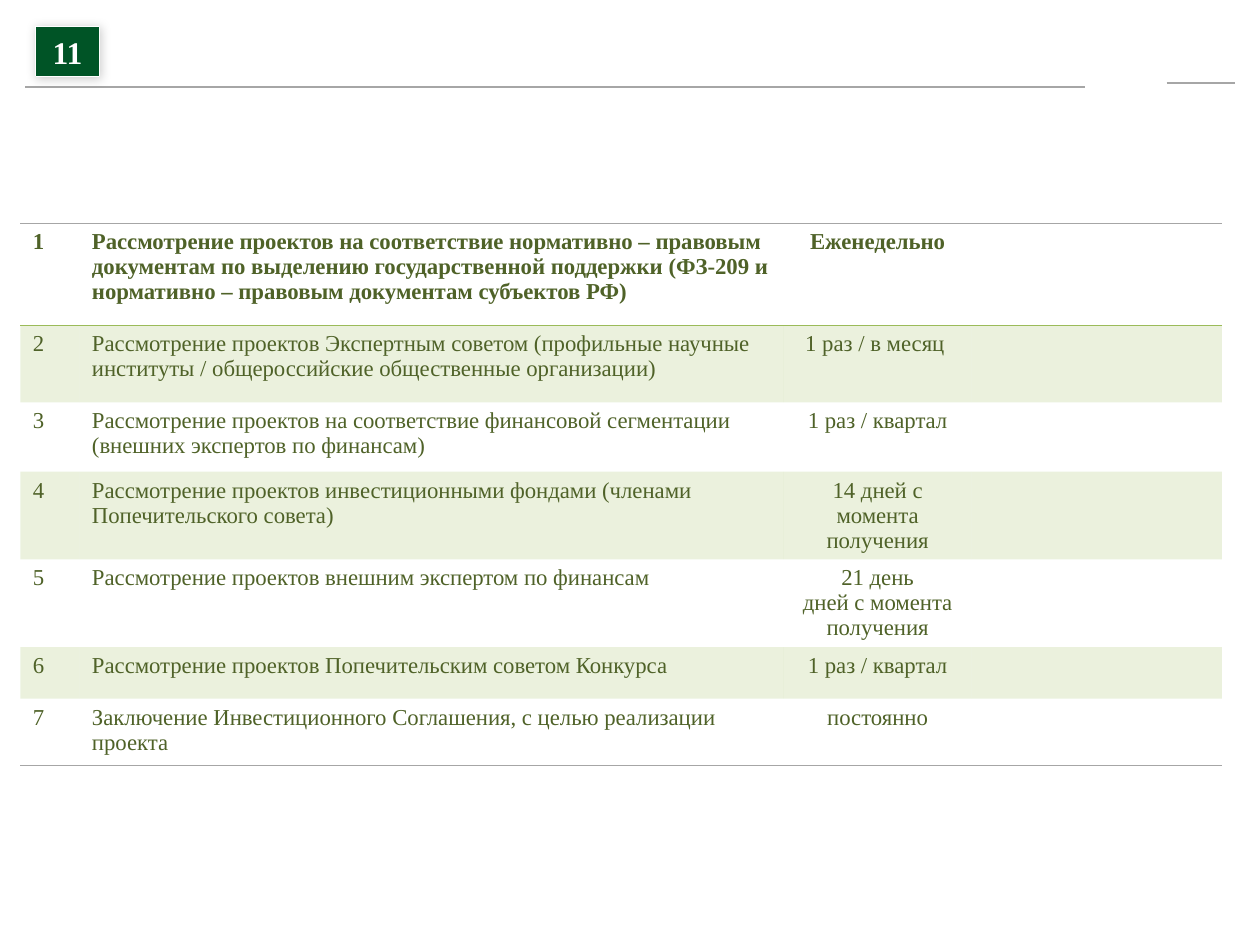
from dataclasses import dataclass

from lxml import etree
from pptx import Presentation
from pptx.dml.color import RGBColor
from pptx.enum import shapes, text
from pptx.oxml import ns, parse_xml
from pptx.util import Cm, Pt


@dataclass(frozen=True)
class Theme:
    font: str = "Times New Roman"
    ink: str = "4F6228"
    band: str = "9BBB59"
    rule: str = "A6A6A6"
    badge: str = "005426"
    white: str = "FFFFFF"
    body: int = 13
    number: int = 18


THEME = Theme()
PLAIN = "{2D5ABB26-0587-4C30-8999-92F81FD0307C}"
COLS = [1.19, 14.2, 3.78, 5.05]
ROWS = [2.06, 1.55, 1.4, 1.3, 1.17, 1.04, 1.35]
STAGES = [
    ("Рассмотрение проектов на соответствие нормативно – правовым документам "
     "по выделению государственной поддержки (ФЗ-209 и нормативно – правовым "
     "документам субъектов РФ)", "Еженедельно"),
    ("Рассмотрение проектов Экспертным советом (профильные научные институты / "
     "общероссийские общественные организации)", "1 раз / в месяц "),
    ("Рассмотрение проектов на соответствие финансовой сегментации "
     "(внешних экспертов по финансам)", "1 раз / квартал"),
    ("Рассмотрение проектов инвестиционными фондами "
     "(членами Попечительского совета)", "14 дней с момента получения"),
    ("Рассмотрение проектов внешним экспертом по финансам",
     "21 день\nдней с момента получения"),
    ("Рассмотрение проектов Попечительским советом Конкурса",
     "1 раз / квартал"),
    ("Заключение Инвестиционного Соглашения, с целью реализации проекта",
     "постоянно"),
]


def rgb(code):
    return RGBColor.from_string(code)


def write(frame, words, size=THEME.body, color=THEME.ink, bold=False,
          align=text.PP_ALIGN.LEFT):
    frame.text = words
    frame.word_wrap = True
    for para in frame.paragraphs:
        para.alignment = align
        for run in para.runs:
            font = run.font
            font.name, font.size, font.bold = THEME.font, Pt(size), bold
            font.color.rgb = rgb(color)


def add_rule(slide, left, right, top):
    line = slide.shapes.add_connector(
        shapes.MSO_CONNECTOR.STRAIGHT, Cm(left), Cm(top), Cm(right), Cm(top))
    line.line.color.rgb = rgb(THEME.rule)
    line.line.width = Pt(1)
    etree.SubElement(line._element.spPr, ns.qn("a:effectLst"))


def add_badge(slide, words):
    box = slide.shapes.add_shape(
        shapes.MSO_SHAPE.RECTANGLE, Cm(0.71), Cm(0.53), Cm(1.3), Cm(1.02))
    box.fill.solid()
    box.fill.fore_color.rgb = rgb(THEME.badge)
    box.line.color.rgb = rgb(THEME.white)
    box.line.width = Pt(0.75)
    box._element.spPr.append(parse_xml(
        f'<a:effectLst {ns.nsdecls("a")}><a:outerShdw blurRad="{Pt(6)}" '
        f'dist="{Pt(1)}" dir="2700000"><a:srgbClr val="000000">'
        '<a:alpha val="20000"/></a:srgbClr></a:outerShdw></a:effectLst>'))
    write(box.text_frame, words, size=THEME.number, color=THEME.white,
          bold=True, align=text.PP_ALIGN.CENTER)


def set_edge(cell, side, color, width):
    """Put a border first in the cell; add the bottom (B) before the top (T)."""
    cell._tc.get_or_add_tcPr().insert(0, parse_xml(
        f'<a:ln{side} {ns.nsdecls("a")} w="{Pt(width)}"><a:solidFill>'
        f'<a:srgbClr val="{color}"/></a:solidFill></a:ln{side}>'))


def set_band(cell, shaded):
    if not shaded:
        cell.fill.background()
        return
    cell.fill.solid()
    cell.fill.fore_color.rgb = rgb(THEME.band)
    color = cell._tc.tcPr.find(".//" + ns.qn("a:srgbClr"))
    etree.SubElement(color, ns.qn("a:alpha"), val="20000")


def add_stages(slide):
    table = slide.shapes.add_table(
        len(ROWS), len(COLS), Cm(0.41), Cm(4.5),
        Cm(sum(COLS)), Cm(sum(ROWS))).table
    table._tbl.tblPr.find(ns.qn("a:tableStyleId")).text = PLAIN
    for col, width in zip(table.columns, COLS):
        col.width = Cm(width)
    for row, high in zip(table.rows, ROWS):
        row.height = Cm(high)
    last = len(ROWS) - 1
    for num, (stage, term) in enumerate(STAGES):
        cells = list(table.rows[num].cells)
        for cell in cells:
            set_band(cell, num % 2 == 1)
            if num == 0:
                set_edge(cell, "B", THEME.band, 1)
                set_edge(cell, "T", THEME.rule, 0.75)
            elif num == last:
                set_edge(cell, "B", THEME.rule, 0.75)
        bold = num == 0
        write(cells[0].text_frame, str(num + 1), bold=bold)
        write(cells[1].text_frame, stage, bold=bold)
        write(cells[2].text_frame, term, bold=bold,
              align=text.PP_ALIGN.CENTER)


def main():
    deck = Presentation()
    deck.slide_width, deck.slide_height = Cm(25.4), Cm(19.05)
    slide = deck.slides.add_slide(deck.slide_layouts[6])
    add_rule(slide, 0.51, 21.87, 1.75)
    add_rule(slide, 23.52, 24.89, 1.68)
    add_stages(slide)
    add_badge(slide, "11")
    deck.save("out.pptx")


if __name__ == "__main__":
    main()
